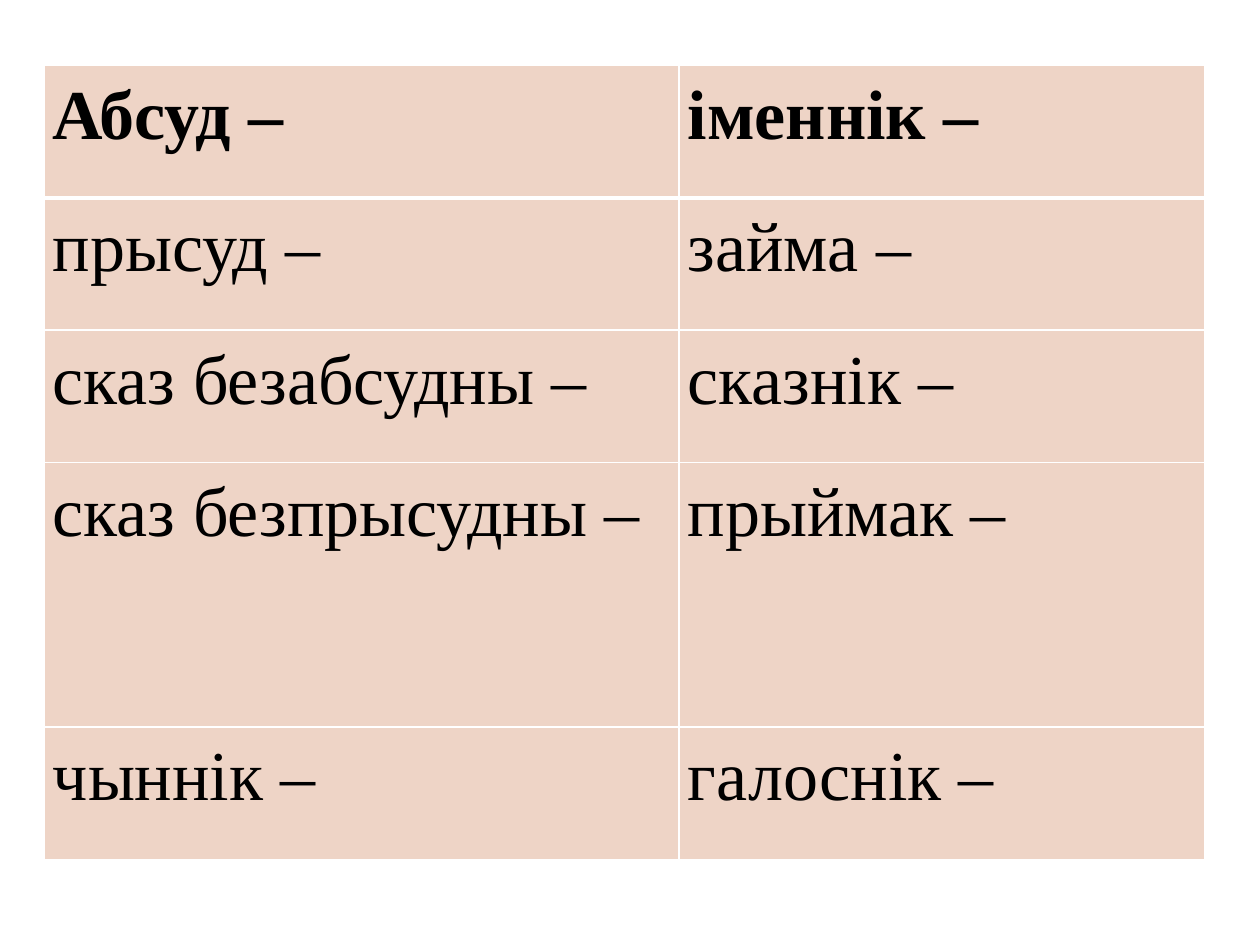
"""Build a slide with a two-column table of grammar terms."""
import pptx
import pptx.dml.color
import pptx.oxml.ns
import pptx.util
from lxml import etree
from pptx.util import Inches

TERMS = [
    ("Абсуд –", "іменнік –"),
    ("прысуд –", "займа –"),
    ("сказ безабсудны –", "сказнік –"),
    ("сказ безпрысудны –", "прыймак –"),
    ("чыннік –", "галоснік –"),
]
COLUMN_WIDTHS = (5.04, 4.17)
ROW_HEIGHTS = (1.05, 1.05, 1.05, 2.1, 1.05)
LEFT, TOP = 0.35, 0.52
PEACH = pptx.dml.color.RGBColor(0xEE, 0xD4, 0xC6)
WHITE = pptx.dml.color.RGBColor(0xFF, 0xFF, 0xFF)
BLACK = pptx.dml.color.RGBColor(0, 0, 0)


def add_border(cell, side, width):
    qn = pptx.oxml.ns.qn
    properties = cell._tc.get_or_add_tcPr()
    border = etree.SubElement(properties, qn(f"a:ln{side}"), w=str(pptx.util.Pt(width)))
    fill = etree.SubElement(border, qn("a:solidFill"))
    etree.SubElement(fill, qn("a:srgbClr"), val=str(WHITE))


def write_term(cell, text, *, size=40, bold=False, color=BLACK, font="Times New Roman"):
    cell.margin_left = cell.margin_right = Inches(0.07)
    cell.margin_top = cell.margin_bottom = 0
    paragraph = cell.text_frame.paragraphs[0]
    paragraph.line_spacing = 1.15
    run = paragraph.add_run()
    run.text = text
    run.font.name = font
    run.font.size = pptx.util.Pt(size)
    run.font.bold = bold
    run.font.color.rgb = color


def main():
    deck = pptx.Presentation()
    deck.slide_width, deck.slide_height = Inches(10), Inches(7.5)
    slide = deck.slides.add_slide(deck.slide_layouts[6])
    glossary = slide.shapes.add_table(
        len(TERMS), len(COLUMN_WIDTHS), Inches(LEFT), Inches(TOP),
        Inches(sum(COLUMN_WIDTHS)), Inches(sum(ROW_HEIGHTS)),
    ).table
    glossary.horz_banding = False
    for column, width in zip(glossary.columns, COLUMN_WIDTHS):
        column.width = Inches(width)
    for row, height in zip(glossary.rows, ROW_HEIGHTS):
        row.height = Inches(height)

    for row_index, terms in enumerate(TERMS):
        border_widths = {"L": 1, "R": 1, "T": 3 if row_index == 1 else 1,
                         "B": 3 if row_index == 0 else 1}
        for column_index, term in enumerate(terms):
            cell = glossary.cell(row_index, column_index)
            write_term(cell, term, bold=row_index == 0)
            for side, width in border_widths.items():
                add_border(cell, side, width)
            cell.fill.solid()
            cell.fill.fore_color.rgb = PEACH
    deck.save("out.pptx")


if __name__ == "__main__":
    main()
